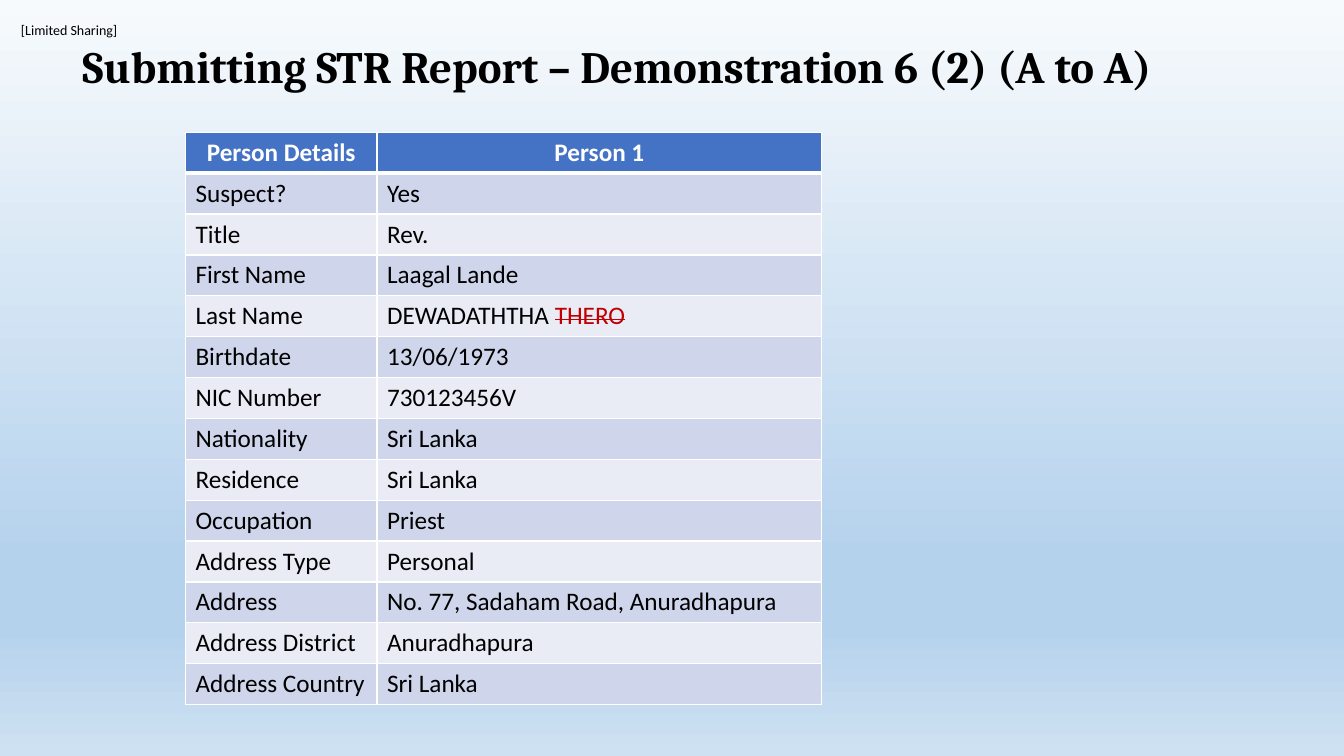
from lxml import etree
from pptx import Presentation, util as u
from pptx.dml import color
from pptx.enum import text
from pptx.oxml import ns

BLACK, WHITE, RED, BLUE = "000000", "FFFFFF", "C00000", "4472C4"
BANDS = "CFD5EA", "E9EBF5"
SKY = (0, "F7FAFD"), (74, "B5D2EC"), (83, "B5D2EC"), (100, "CEE1F2")
HEADINGS = "Person Details", "Person 1"
LAST_NAME = "Last Name"
STRUCK = "THERO"
DETAILS = [
    ("Suspect?", "Yes"),
    ("Title", "Rev."),
    ("First Name", "Laagal Lande"),
    (LAST_NAME, "DEWADATHTHA "),
    ("Birthdate", "13/06/1973"),
    ("NIC Number", "730123456V"),
    ("Nationality", "Sri Lanka"),
    ("Residence", "Sri Lanka"),
    ("Occupation", "Priest"),
    ("Address Type", "Personal"),
    ("Address", "No. 77, Sadaham Road, Anuradhapura"),
    ("Address District", "Anuradhapura"),
    ("Address Country", "Sri Lanka"),
]


def rgb(value):
    """Turn a hex string into a colour."""
    return color.RGBColor.from_string(value)


def child(parent, tag, **attributes):
    """Append a DrawingML element and return it."""
    return etree.SubElement(parent, ns.qn(tag), attributes)


def write(paragraph, words, ink=BLACK, **formats):
    """Add a formatted run to a paragraph and return it."""
    run = paragraph.add_run()
    run.text = words
    run.font.color.rgb = rgb(ink)
    for name, value in formats.items():
        setattr(run.font, name, value)
    return run


def paint_sky(slide):
    """Fill the background with a vertical gradient."""
    fill = slide.background.fill
    fill.gradient()
    fill.gradient_angle = 270
    stops = slide.element.find(".//" + ns.qn("a:gsLst"))
    for stop in list(stops):
        stops.remove(stop)
    for percent, tint in SKY:
        stop = child(stops, "a:gs", pos=str(percent * 1000))
        child(stop, "a:srgbClr", val=tint)


def place_line(slide, box, words, frame_formats, **formats):
    """Place one line of text in a box."""
    frame = slide.shapes.add_textbox(*map(u.Pt, box)).text_frame
    for name, value in frame_formats.items():
        setattr(frame, name, value)
    write(frame.paragraphs[0], words, **formats)
    return frame.paragraphs[0]


def style_cell(cell, tint, bottom):
    """Give a cell white borders and a solid fill."""
    properties = cell._tc.get_or_add_tcPr()
    for side, width in zip("LRTB", (1, 1, 1, bottom)):
        border = child(properties, "a:ln" + side, w=str(u.Pt(width)))
        child(child(border, "a:solidFill"), "a:srgbClr", val=WHITE)
    cell.fill.solid()
    cell.fill.fore_color.rgb = rgb(tint)


def place_details(slide, box, label_width):
    """Place the table of person details in a box."""
    left, top, width, height = box
    rows = [HEADINGS, *DETAILS]
    table = slide.shapes.add_table(len(rows), 2, *map(u.Pt, box)).table
    for column, size in zip(table.columns, (label_width, width - label_width)):
        column.width = u.Pt(size)
    for index, entries in enumerate(rows):
        heading = index == 0
        table.rows[index].height = u.Pt(height / len(rows))
        for cell, words in zip(table.rows[index].cells, entries):
            style_cell(cell, BLUE if heading else BANDS[(index - 1) % 2], 3 if heading else 1)
            paragraph = cell.text_frame.paragraphs[0]
            paragraph.alignment = text.PP_ALIGN.CENTER if heading else text.PP_ALIGN.LEFT
            write(paragraph, words, WHITE if heading else BLACK,
                  name="Calibri", size=u.Pt(18), bold=heading)
        if entries[0] == LAST_NAME:
            struck = write(paragraph, STRUCK, RED, name="Calibri", size=u.Pt(18), bold=False)
            struck._r.get_or_add_rPr().set("strike", "sngStrike")


def main():
    """Build the slide and save it."""
    deck = Presentation()
    deck.slide_width, deck.slide_height = u.Pt(960), u.Pt(540)
    slide = deck.slides.add_slide(deck.slide_layouts[6])
    paint_sky(slide)
    margins = dict.fromkeys(("margin_left", "margin_top", "margin_right", "margin_bottom"), 0)
    place_line(slide, (15, 15, 71.5, 12), "[Limited Sharing]",
               {**margins, "word_wrap": False, "auto_size": text.MSO_AUTO_SIZE.SHAPE_TO_FIT_TEXT},
               name="Calibri", size=u.Pt(10))
    title = place_line(slide, (51.8, 18, 856.8, 62.6),
                       "Submitting STR Report – Demonstration 6 (2) (A to A)",
                       {"word_wrap": True, "vertical_anchor": text.MSO_ANCHOR.MIDDLE},
                       name="Cambria", size=u.Pt(32), bold=True)
    title.line_spacing = 0.9
    place_details(slide, (132.5, 94.5, 454.5, 408.8), 136.8)
    deck.save("out.pptx")


if __name__ == "__main__":
    main()
